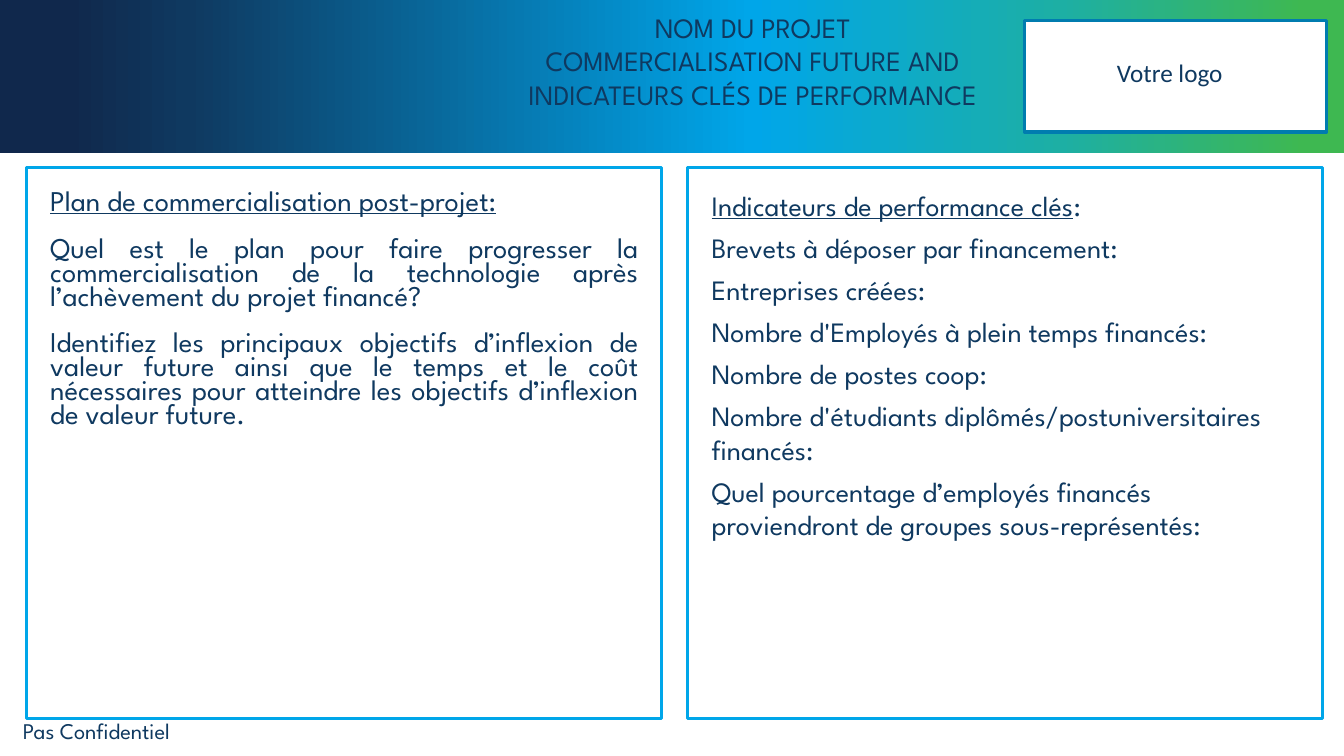
import pptx
import pptx.util
import pptx.dml.color
import pptx.enum.shapes
import pptx.enum.text
import pptx.oxml
import pptx.oxml.ns

Inches = pptx.util.Inches
Pt = pptx.util.Pt
ALIGN = pptx.enum.text.PP_ALIGN

TITLE = [
    [("NOM DU PROJET", False)],
    [("COMMERCIALISATION FUTURE AND INDICATEURS CLÉS DE PERFORMANCE", False)],
]
PLAN = [
    [("Plan de commercialisation post-projet:", True)],
    [("Quel est le plan pour faire progresser la commercialisation de la "
      "technologie après l’achèvement du projet financé?", False)],
    [("Identifiez les principaux objectifs d’inflexion de valeur future ainsi "
      "que le temps et le coût nécessaires pour atteindre les objectifs "
      "d’inflexion de valeur future.", False)],
]
INDICATORS = [
    [("Indicateurs de performance clés", True), (":", False)],
    [("Brevets à déposer par financement:", False)],
    [("Entreprises créées:", False)],
    [("Nombre d'Employés à plein temps financés:", False)],
    [("Nombre de postes coop:", False)],
    [("Nombre d'étudiants diplômés/postuniversitaires financés:", False)],
    [("Quel pourcentage d’employés financés proviendront de groupes "
      "sous-représentés:", False)],
]
LOGO_LABEL = [[("Votre logo", False)]]
CONFIDENTIALITY = [[("Pas Confidentiel", False)]]

THEME = {
    "font": "League Spartan",
    "logo_font": "Calibri",
    "text": "0F3960",
    "white": "FFFFFF",
    "panel_line": "00A6E9",
    "logo_line": "007CAF",
    "header": [(5, "10284C"), (14, "0F3960"), (56, "00A6E9"), (79, "1DAFA4"), (97, "3EB851")],
    "size": 20,
    "plan_size": 20.4,
    "logo_size": 18,
    "footer_size": 16,
    "line_width": 2.25,
}

SLIDE_WIDTH, SLIDE_HEIGHT = 13.33, 7.5
PANEL_LEFT, PANEL_TOP, PANEL_WIDTH, PANEL_HEIGHT = 0.26, 1.66, 6.3, 5.47
PANEL_GAP = 0.26


def rgb(name):
    return pptx.dml.color.RGBColor.from_string(THEME[name])


def add_rect(shapes, box, fill=None, line=None):
    rect = shapes.add_shape(pptx.enum.shapes.MSO_SHAPE.RECTANGLE, *map(Inches, box))
    rect.shadow.inherit = False
    if fill:
        rect.fill.solid()
        rect.fill.fore_color.rgb = rgb(fill)
    else:
        rect.fill.background()
    if line:
        rect.line.color.rgb = rgb(line)
        rect.line.width = Pt(THEME["line_width"])
    else:
        rect.line.fill.background()
    return rect


def write(shape, content, size="size", font="font", align=ALIGN.LEFT,
          before=0, after=0, spacing=None, wrap=True):
    frame = shape.text_frame
    frame.word_wrap = wrap
    frame.vertical_anchor = pptx.enum.text.MSO_ANCHOR.TOP
    for index, pieces in enumerate(content):
        paragraph = frame.add_paragraph() if index else frame.paragraphs[0]
        paragraph.alignment = align
        paragraph.space_before = Pt(before if index else 0)
        paragraph.space_after = Pt(after)
        if spacing:
            paragraph.line_spacing = spacing
        for words, underlined in pieces:
            run = paragraph.add_run()
            run.text = words
            run.font.name = THEME[font]
            run.font.size = Pt(THEME[size])
            run.font.color.rgb = rgb("text")
            run.font.underline = underlined


def add_text(shapes, box, content, **style):
    write(shapes.add_textbox(*map(Inches, box)), content, **style)


def add_header(shapes):
    header = add_rect(shapes, (0, 0, SLIDE_WIDTH, 1.52))
    header.fill.gradient()
    header.fill.gradient_angle = 0
    stops = header.fill.gradient_stops
    stop_list = header._element.spPr.find(".//" + pptx.oxml.ns.qn("a:gsLst"))
    for stop in list(stop_list):
        stop_list.remove(stop)
    for percent, color in THEME["header"]:
        stop_list.append(pptx.oxml.parse_xml(
            f'<a:gs {pptx.oxml.ns.nsdecls("a")} pos="{percent * 1000}">'
            f'<a:srgbClr val="{color}"/></a:gs>'))


def main():
    deck = pptx.Presentation()
    deck.slide_width = Inches(SLIDE_WIDTH)
    deck.slide_height = Inches(SLIDE_HEIGHT)
    shapes = deck.slides.add_slide(deck.slide_layouts[6]).shapes

    add_header(shapes)
    add_text(shapes, (0.4, 1.86, 6.03, 2.37), PLAN, size="plan_size",
             align=ALIGN.JUSTIFY, before=10, after=6, spacing=0.7)

    logo = shapes.add_group_shape().shapes
    add_rect(logo, (10.16, 0.2, 3, 1.11), "white", "logo_line")
    logo_label = add_rect(logo, (10.98, 0.52, 1.26, 0.4), "white")
    write(logo_label, LOGO_LABEL, size="logo_size", font="logo_font", wrap=False)

    for column in range(2):
        left = PANEL_LEFT + column * (PANEL_WIDTH + PANEL_GAP)
        add_rect(shapes, (left, PANEL_TOP, PANEL_WIDTH, PANEL_HEIGHT), line="panel_line")

    add_text(shapes, (6.96, 1.82, 5.97, 4.44), INDICATORS, after=6)
    add_text(shapes, (4.79, 0.05, 5.35, 1.45), TITLE, align=ALIGN.CENTER)
    add_text(shapes, (0.13, 7.07, 2.06, 0.37), CONFIDENTIALITY, size="footer_size")

    deck.save("out.pptx")


if __name__ == "__main__":
    main()
